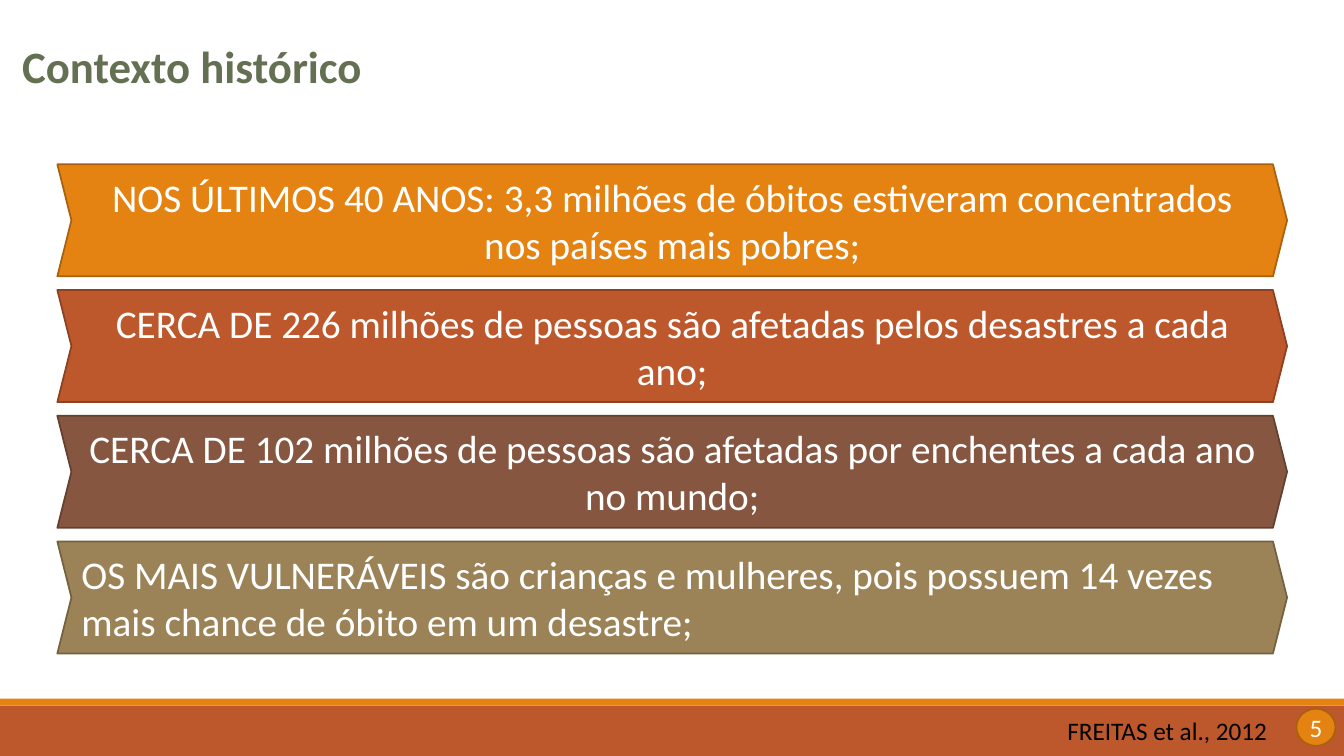
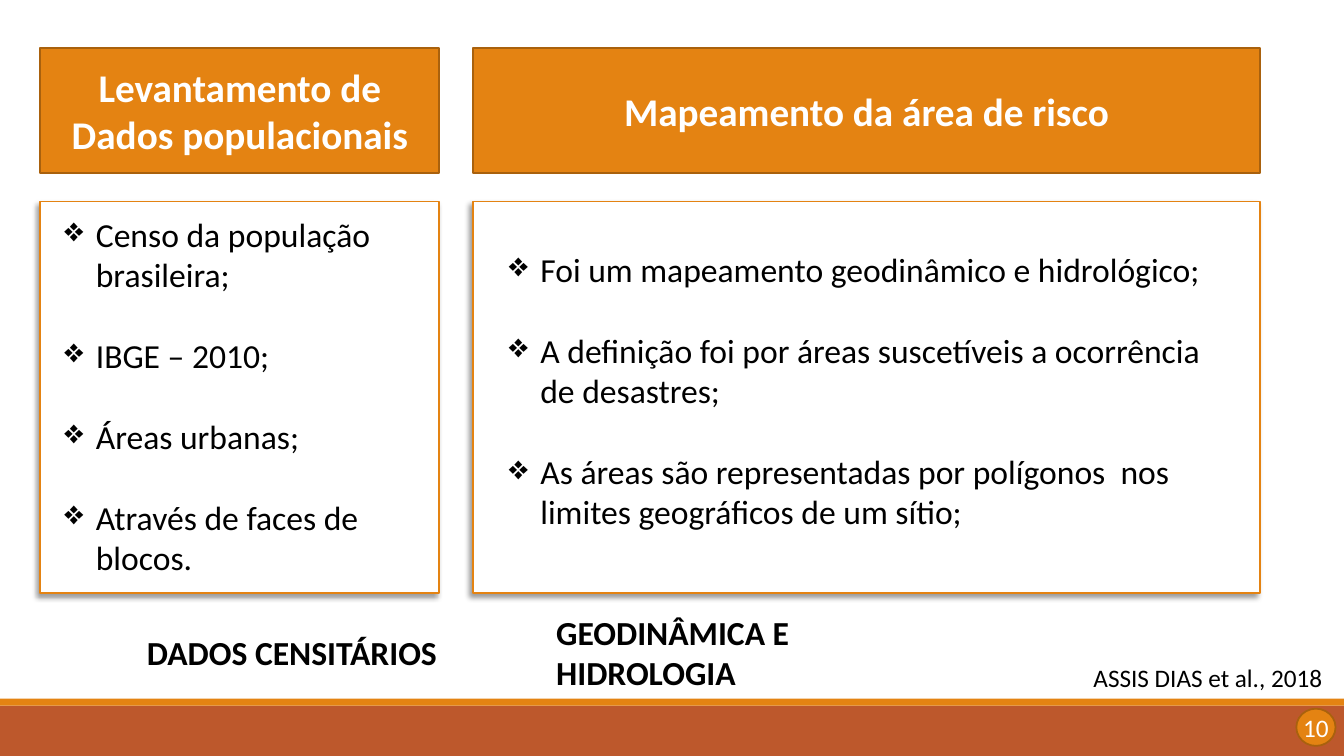
from lxml import etree
from pptx import Presentation
from pptx.dml.color import RGBColor
from pptx.enum.shapes import MSO_SHAPE
from pptx.enum.text import MSO_ANCHOR, PP_ALIGN
from pptx.oxml import parse_xml
from pptx.oxml.ns import nsdecls, qn
from pptx.util import Pt

RECTANGLE, CHEVRON, OVAL = MSO_SHAPE.RECTANGLE, MSO_SHAPE.CHEVRON, MSO_SHAPE.OVAL
LEFT, CENTER = PP_ALIGN.LEFT, PP_ALIGN.CENTER
TOP, MIDDLE = MSO_ANCHOR.TOP, MSO_ANCHOR.MIDDLE

FONT = "Calibri"
WIDTH, HEIGHT = 960, 540
ORANGE, RUST, BROWN, OLIVE = "E48312", "BD582C", "865640", "9B8357"
DARK_ORANGE, GREEN, WHITE, BLACK = "A9610D", "637052", "FFFFFF", "000000"

BANDS = [((0, 504, WIDTH, 36), RUST), ((0, 499, WIDTH, 5), ORANGE)]

TITLE = "Contexto histórico"
FACTS = [
    ("NOS ÚLTIMOS 40 ANOS: 3,3 milhões de óbitos estiveram concentrados nos países mais pobres;",
     ORANGE, DARK_ORANGE, CENTER),
    ("CERCA DE 226 milhões de pessoas são afetadas pelos desastres a cada ano;",
     RUST, "8C4121", CENTER),
    ("CERCA DE 102 milhões de pessoas são afetadas por enchentes a cada ano no mundo;",
     BROWN, "63402F", CENTER),
    ("OS MAIS VULNERÁVEIS são crianças e mulheres, pois possuem 14 vezes mais chance de óbito em um desastre;",
     OLIVE, "736140", LEFT),
]
FACT_LEFT, FACT_TOP, FACT_WIDTH, FACT_HEIGHT, FACT_STEP = 41, 117.4, 878.4, 80, 89.8

COLUMNS = [
    {"heading": "Levantamento de Dados populacionais", "left": 28.8, "width": 285,
     "points": ["Censo da população brasileira;", "IBGE – 2010;", "Áreas urbanas;",
                "Através de faces de blocos."],
     "points_box": (38.9, 149, 265.7, 269),
     "caption": "DADOS CENSITÁRIOS", "caption_box": (97.9, 447.8, 233, 36)},
    {"heading": "Mapeamento da área de risco", "left": 337.7, "width": 562.3,
     "points": ["Foi um mapeamento geodinâmico e hidrológico;",
                "A definição foi por áreas suscetíveis a ocorrência de desastres;",
                "As áreas são representadas por polígonos  nos limites geográficos de um sítio;"],
     "points_box": (356.4, 174.2, 524, 211),
     "caption": "GEODINÂMICA E HIDROLOGIA", "caption_box": (390.2, 433.4, 233, 65.5)},
]
HEADING_TOP, HEADING_HEIGHT = 34.4, 89.3
PANEL_TOP, PANEL_HEIGHT = 144, 279.4
POINT_INDENT, POINT_GAP = 22.5, 29


def color(value):
    return RGBColor.from_string(value)


def points(box):
    return [Pt(length) for length in box]


def write(shape, texts, size, text_color=BLACK, bold=False, align=LEFT, anchor=TOP):
    frame = shape.text_frame
    frame.word_wrap = True
    frame.vertical_anchor = anchor
    frame.text = "\n".join(texts)
    for paragraph in frame.paragraphs:
        paragraph.alignment = align
        font = paragraph.font
        font.name, font.size, font.bold = FONT, Pt(size), bold
        font.color.rgb = color(text_color)
    return frame


def add_text(slide, box, texts, size, **style):
    return write(slide.shapes.add_textbox(*points(box)), texts, size, **style)


def add_shape(slide, kind, box, fill, line=None):
    shape = slide.shapes.add_shape(kind, *points(box))
    shape.shadow.inherit = False
    shape.fill.solid()
    shape.fill.fore_color.rgb = color(fill)
    if line:
        shape.line.color.rgb = color(line)
        shape.line.width = Pt(1.25)
    else:
        shape.line.fill.background()
    return shape


def add_drop_shadow(shape):
    effects = shape._element.spPr.find(qn("a:effectLst"))
    effects.append(parse_xml(
        f'<a:outerShdw {nsdecls("a")} blurRad="{Pt(4)}" dist="{Pt(3)}" dir="{135 * 60000}" '
        f'algn="tr" rotWithShape="0"><a:srgbClr val="{BLACK}"><a:alpha val="40000"/>'
        '</a:srgbClr></a:outerShdw>'))


def add_bullets(frame):
    for index, paragraph in enumerate(frame.paragraphs):
        paragraph.space_before = Pt(POINT_GAP if index else 0)
        properties = paragraph._p.get_or_add_pPr()
        properties.set("marL", str(Pt(POINT_INDENT)))
        properties.set("indent", str(-Pt(POINT_INDENT)))
        bullet = etree.Element(qn("a:buChar"), char="❖")
        properties.find(qn("a:defRPr")).addprevious(bullet)


def add_page_number(slide, number):
    badge = add_shape(slide, OVAL, (926, 506.2, 28, 26.6), ORANGE, DARK_ORANGE)
    frame = write(badge, [number], 18, WHITE, align=CENTER, anchor=MIDDLE)
    frame.word_wrap = False
    frame.margin_left = frame.margin_right = frame.margin_top = frame.margin_bottom = 0


def move_bands_to_master(presentation, slide):
    tree = presentation.slide_master.shapes._spTree
    for box, fill in BANDS:
        tree.append(add_shape(slide, RECTANGLE, box, fill)._element)


def build_history(slide):
    title = slide.shapes.title
    title.left, title.top, title.width, title.height = points((8.6, 23.8, 324, 46))
    write(title, [TITLE], 32, GREEN, bold=True)
    for index, (text, fill, line, align) in enumerate(FACTS):
        box = (FACT_LEFT, FACT_TOP + index * FACT_STEP, FACT_WIDTH, FACT_HEIGHT)
        arrow = add_shape(slide, CHEVRON, box, fill, line)
        arrow.adjustments[0] = 0.126
        write(arrow, [text], 28, WHITE, align=align, anchor=MIDDLE)
    add_text(slide, (755.3, 507.6, 190, 29), ["FREITAS et al., 2012"], 18)
    add_page_number(slide, "5")


def build_survey(slide):
    for column in COLUMNS:
        left, width = column["left"], column["width"]
        heading = add_shape(slide, RECTANGLE, (left, HEADING_TOP, width, HEADING_HEIGHT),
                            ORANGE, DARK_ORANGE)
        write(heading, [column["heading"]], 28, WHITE, bold=True, align=CENTER, anchor=MIDDLE)
        panel = add_shape(slide, RECTANGLE, (left, PANEL_TOP, width, PANEL_HEIGHT), WHITE, ORANGE)
        add_drop_shadow(panel)
        add_bullets(add_text(slide, column["points_box"], column["points"], 24))
        add_text(slide, column["caption_box"], [column["caption"]], 24, bold=True)
    add_text(slide, (774, 469.4, 186, 29), ["ASSIS DIAS et al., 2018"], 18)
    add_page_number(slide, "10")


def main():
    presentation = Presentation()
    presentation.slide_width, presentation.slide_height = Pt(WIDTH), Pt(HEIGHT)
    title_only, blank = presentation.slide_layouts[5], presentation.slide_layouts[6]
    history = presentation.slides.add_slide(title_only)
    move_bands_to_master(presentation, history)
    build_history(history)
    build_survey(presentation.slides.add_slide(blank))
    presentation.save("out.pptx")


if __name__ == "__main__":
    main()
